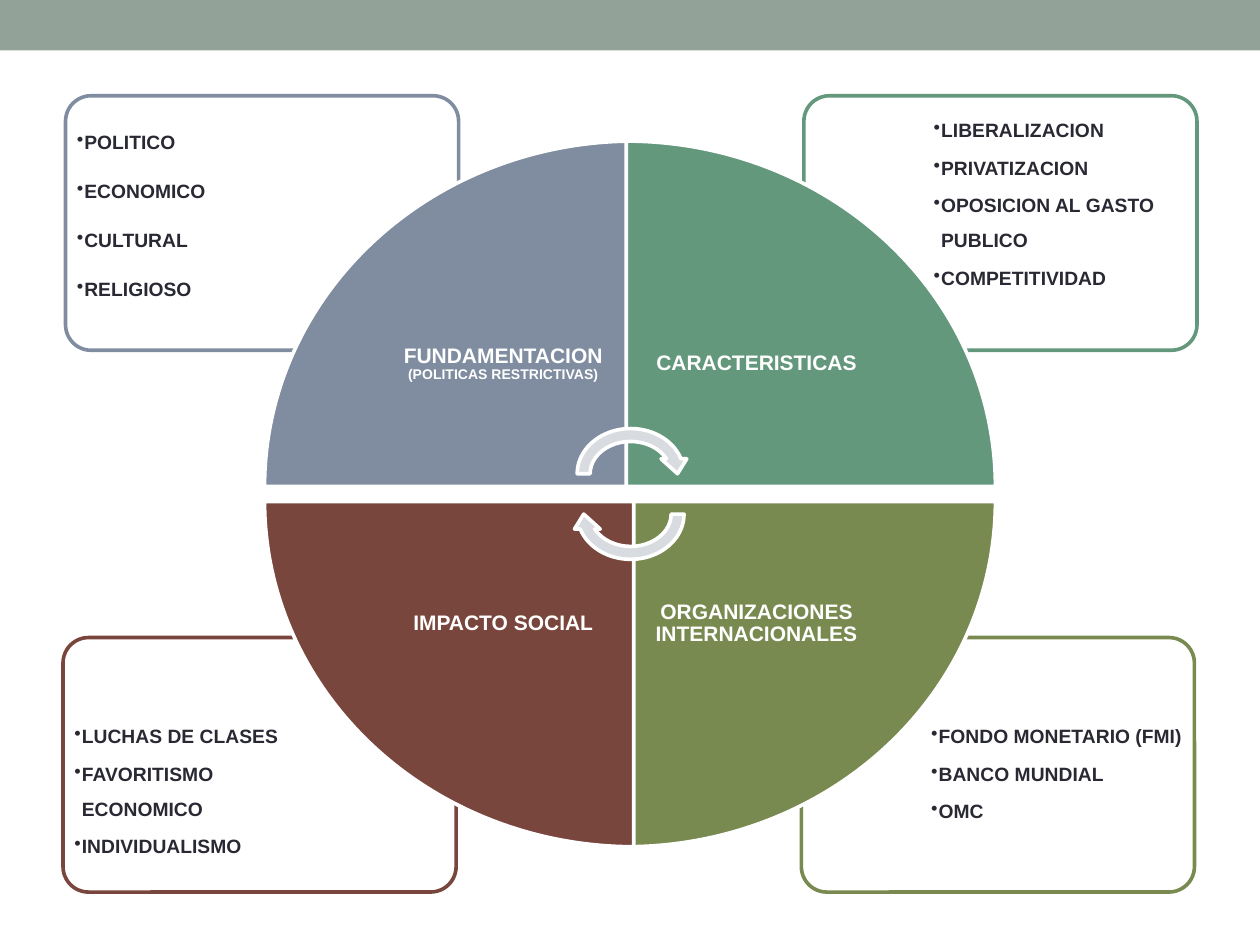
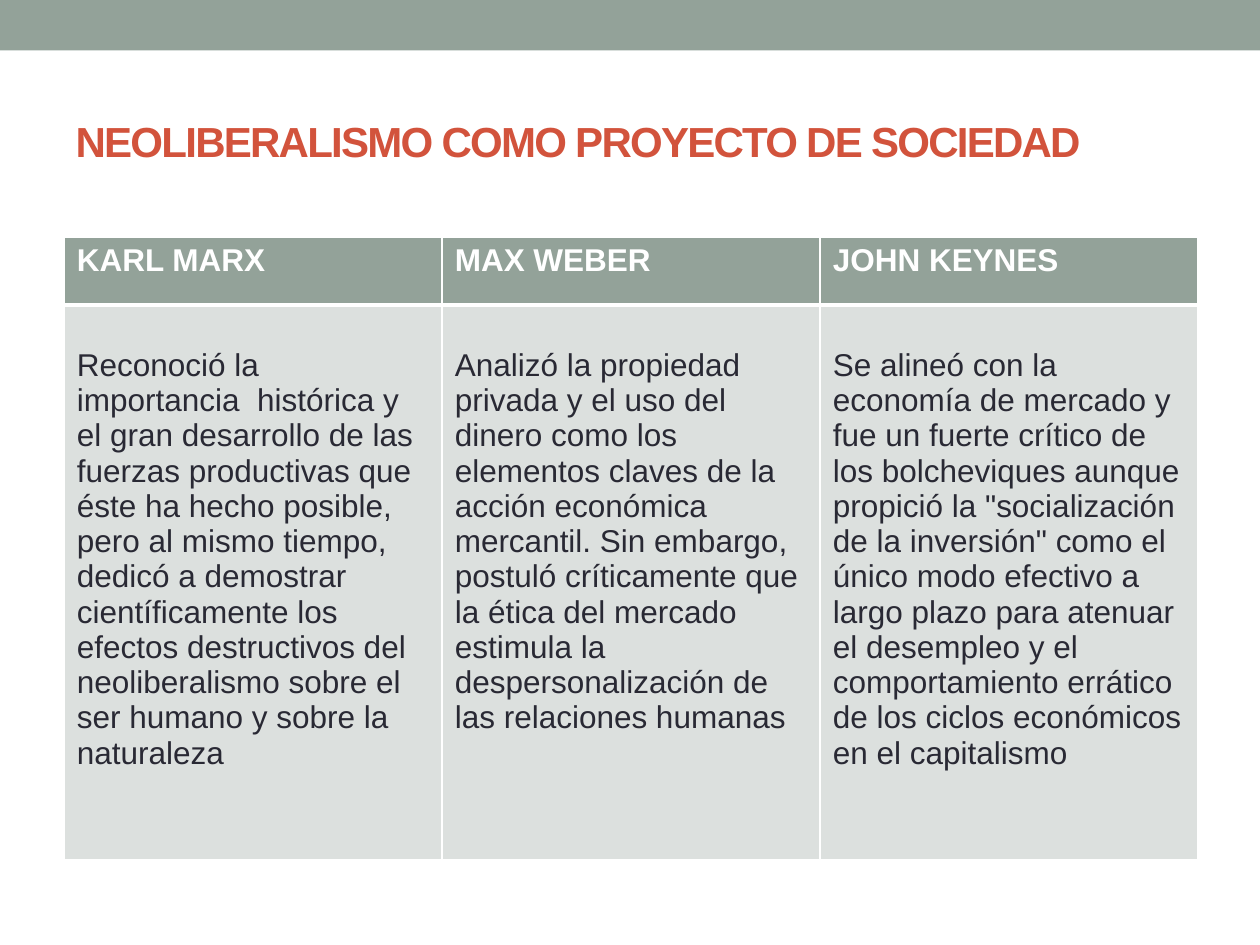
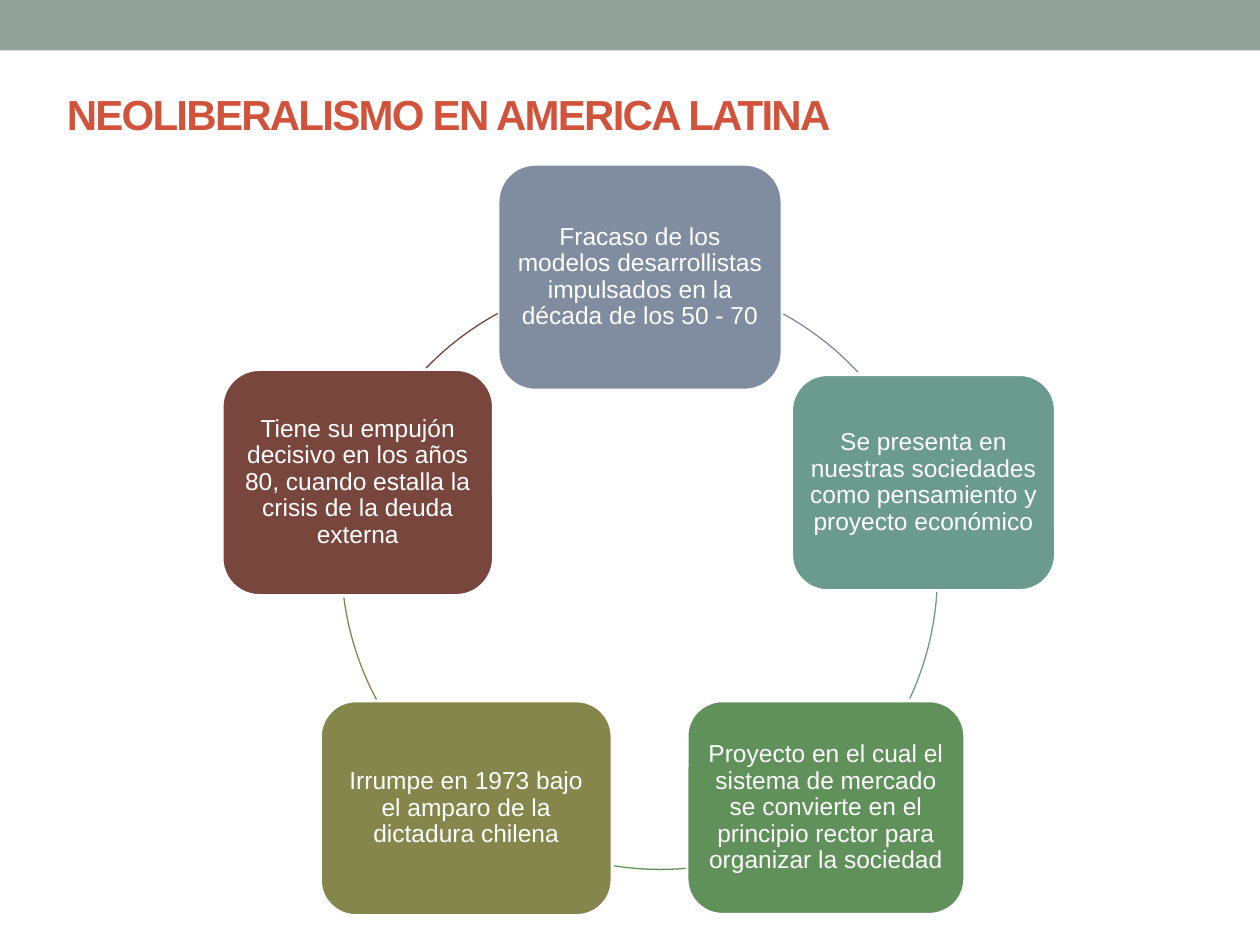
from lxml.etree import SubElement
from pptx import Presentation
from pptx.dml.color import RGBColor
from pptx.enum.shapes import MSO_SHAPE
from pptx.enum.text import MSO_ANCHOR, PP_ALIGN
from pptx.oxml.ns import qn
from pptx.util import Pt

PX = 9144
FONT = "Arial"
LINE = 2.08

WHITE = RGBColor(0xFF, 0xFF, 0xFF)
INK = RGBColor(0x29, 0x29, 0x34)
SAGE = RGBColor(0x93, 0xA2, 0x99)
PALE = RGBColor(0xDC, 0xE0, 0xDE)
RED = RGBColor(0xD2, 0x53, 0x3C)
SLATE = RGBColor(0x80, 0x8D, 0xA0)
GREEN = RGBColor(0x64, 0x98, 0x7C)
OLIVE = RGBColor(0x78, 0x8A, 0x50)
BROWN = RGBColor(0x79, 0x46, 0x3D)
TEAL = RGBColor(0x6B, 0x9A, 0x8E)
LEAF = RGBColor(0x61, 0x91, 0x5A)
MOSS = RGBColor(0x85, 0x86, 0x4B)
SILVER = RGBColor(0xD8, 0xDB, 0xDF)

# column, row, wedge rotation, colour, heading runs, line spacing, bullets
QUADRANTS = [
    (1, 1, 180, OLIVE, [("ORGANIZACIONES INTERNACIONALES", 12)], 1.5,
     ["FONDO MONETARIO (FMI)", "BANCO MUNDIAL", "OMC"]),
    (0, 1, 270, BROWN, [("IMPACTO SOCIAL", 12)], 1.5,
     ["LUCHAS DE CLASES", "FAVORITISMO ECONOMICO", "INDIVIDUALISMO"]),
    (1, 0, 90, GREEN, [("CARACTERISTICAS", 12)], 1.5,
     ["LIBERALIZACION", "PRIVATIZACION", "OPOSICION AL GASTO PUBLICO", "COMPETITIVIDAD"]),
    (0, 0, 0, SLATE, [("FUNDAMENTACION ", 12), ("(POLITICAS RESTRICTIVAS)", 8)], 2.0,
     ["POLITICO", "ECONOMICO", "CULTURAL", "RELIGIOSO"]),
]

THINKERS = [
    ("KARL MARX",
     "Reconoció la importancia  histórica y el gran desarrollo de las fuerzas productivas que "
     "éste ha hecho posible, pero al mismo tiempo, dedicó a demostrar científicamente los efectos "
     "destructivos del neoliberalismo sobre el ser humano y sobre la naturaleza"),
    ("MAX WEBER",
     "Analizó la propiedad privada y el uso del dinero como los elementos claves de la acción "
     "económica mercantil. Sin embargo, postuló críticamente que la ética del mercado estimula la "
     "despersonalización de las relaciones humanas"),
    ("JOHN KEYNES",
     "Se alineó con la economía de mercado y fue un fuerte crítico de los bolcheviques aunque "
     'propició la "socialización de la inversión" como el único modo efectivo a largo plazo para '
     "atenuar el desempleo y el comportamiento errático de los ciclos económicos en el capitalismo"),
]

# text, box, colour, circle corner, arc start and end in degrees
STAGES = [
    ("Fracaso de los modelos desarrollistas impulsados en la década de los 50 - 70",
     (395, 130, 226, 180), SLATE, (272, 220), (298.8, 317.6)),
    ("Se presenta en nuestras sociedades como pensamiento y proyecto económico",
     (628, 297, 210, 172), TEAL, (272, 219), (3.6, 25)),
    ("Proyecto en el cual el sistema de mercado se convierte en el principio rector para "
     "organizar la sociedad",
     (545, 556, 221, 170), LEAF, (288, 218), (85.1, 99.3)),
    ("Irrumpe en 1973 bajo el amparo de la dictadura chilena",
     (254, 556, 232, 171), MOSS, (271, 208), (151.9, 172.7)),
    ("Tiene su empujón decisivo en los años 80, cuando estalla la crisis de la deuda externa",
     (176, 293, 216, 180), BROWN, (272, 220), (224, 241.4)),
]
CIRCLE = 472


def px(*values):
    return [int(v * PX) for v in values]


def style(r, size, color, bold=False):
    r.font.name, r.font.size, r.font.bold = FONT, Pt(size), bold
    r.font.color.rgb = color


def add_shape(s, kind, box, fill=None, line=None, width=LINE):
    sp = s.shapes.add_shape(kind, *px(*box))
    sp.shadow.inherit = False
    if fill is None:
        sp.fill.background()
    else:
        sp.fill.solid()
        sp.fill.fore_color.rgb = fill
    if line is None:
        sp.line.fill.background()
    else:
        sp.line.color.rgb = line
        sp.line.width = Pt(width)
    return sp


def set_frame(tf, inset, anchor):
    tf.word_wrap = True
    tf.vertical_anchor = anchor
    tf.margin_left, tf.margin_top, tf.margin_right, tf.margin_bottom = px(*[inset] * 4)


def centre_text(tf, parts, inset, bold):
    set_frame(tf, inset, MSO_ANCHOR.MIDDLE)
    p = tf.paragraphs[0]
    p.alignment, p.line_spacing = PP_ALIGN.CENTER, 0.9
    for text, size in parts:
        r = p.add_run()
        r.text = text
        style(r, size, WHITE, bold)


def add_bullets(s, box, items, spacing):
    tf = s.shapes.add_textbox(*px(*box)).text_frame
    set_frame(tf, 5, MSO_ANCHOR.TOP)
    tf.text = "\n".join(items)
    for p in tf.paragraphs:
        p.line_spacing, p.space_after = spacing, Pt(1.65)
        style(p.runs[0], 11, INK, True)
        pPr = p._p.get_or_add_pPr()
        pPr.set("marL", str(6 * PX))
        pPr.set("indent", str(-6 * PX))
        SubElement(pPr, qn("a:buChar")).set("char", "•")


def add_titled_slide(prs, title, left, top):
    s = prs.slides.add_slide(prs.slide_layouts[5])
    sp = s.shapes.title
    sp.left, sp.top, sp.width, sp.height = px(left, top, 900, 108)
    tf = sp.text_frame
    tf.text = title
    tf.vertical_anchor = MSO_ANCHOR.MIDDLE
    p = tf.paragraphs[0]
    p.alignment = PP_ALIGN.LEFT
    style(p.runs[0], 24, RED, True)
    p.runs[0]._r.get_or_add_rPr().set("spc", "-100")
    return s


def set_borders(cell, bottom):
    tcPr = cell._tc.get_or_add_tcPr()
    for i, (side, width) in enumerate((("L", 1), ("R", 1), ("T", 1), ("B", bottom))):
        ln = tcPr.makeelement(qn(f"a:ln{side}"), {"w": str(Pt(width))})
        fill = SubElement(ln, qn("a:solidFill"))
        SubElement(fill, qn("a:srgbClr")).set("val", str(WHITE))
        tcPr.insert(i, ln)


def build_quadrants(prs):
    s = prs.slides.add_slide(prs.slide_layouts[6])
    band = add_shape(s, MSO_SHAPE.RECTANGLE, (0, 0, 1000, 40), SAGE)
    prs.slide_master.shapes._spTree.insert(2, band._element)

    for col, row, _, color, _, spacing, items in QUADRANTS:
        x, y = (52, 638)[col] - 2 * row, (76, 506)[row]
        card = add_shape(s, MSO_SHAPE.ROUNDED_RECTANGLE, (x, y, 312, 202), WHITE, color)
        card.adjustments[0] = 0.1
        add_bullets(s, (x + (4, 98)[col], y + (4, 55)[row], 210, 143), items, spacing)

    w, h = 293, 274
    for col, row, turn, color, heading, _, _ in sorted(QUADRANTS, key=lambda q: q[2]):
        x, y = (210, 497)[col], (112, 398)[row]
        d = (w - h) / 2
        box = (x + d, y - d, h, w) if turn % 180 else (x, y, w, h)
        wedge = add_shape(s, MSO_SHAPE.PIE_WEDGE, box, color, WHITE)
        wedge.rotation = turn
        label = s.shapes.add_textbox(*px((296, 497)[col], (192, 398)[row], 207, 194))
        centre_text(label.text_frame, heading, 9, True)

    for y, turn in ((335, 0), (367, 180)):
        arrow = add_shape(s, MSO_SHAPE.CIRCULAR_ARROW, (453, y, 95, 82), SILVER, WHITE)
        arrow.rotation = turn


def build_thinkers(prs):
    s = add_titled_slide(prs, "NEOLIBERALISMO COMO PROYECTO DE SOCIEDAD", 50, 58)
    table = s.shapes.add_table(2, len(THINKERS), *px(51, 188, 900, 494)).table
    table.rows[0].height, table.rows[1].height = px(54, 440)
    for col, texts in enumerate(THINKERS):
        for row, text in enumerate(texts):
            cell = table.cell(row, col)
            cell.text = text
            cell.fill.solid()
            cell.fill.fore_color.rgb = (SAGE, PALE)[row]
            cell.margin_top = px((5, 34)[row])[0]
            style(cell.text_frame.paragraphs[0].runs[0], 18, (WHITE, INK)[row], row == 0)
            set_borders(cell, (3, 1)[row])


def build_stages(prs):
    s = add_titled_slide(prs, "NEOLIBERALISMO EN AMERICA LATINA", 43, 36)
    for text, box, color, corner, angles in STAGES:
        sp = add_shape(s, MSO_SHAPE.ROUNDED_RECTANGLE, box, color, WHITE)
        centre_text(sp.text_frame, [(text, 14)], 6, False)
        arc = add_shape(s, MSO_SHAPE.ARC, (*corner, CIRCLE, CIRCLE), None, color, 0.75)
        for i, angle in enumerate(angles):
            arc.adjustments[i] = angle * 0.6


def main():
    prs = Presentation()
    prs.slide_width, prs.slide_height = px(1000, 750)
    build_quadrants(prs)
    build_thinkers(prs)
    build_stages(prs)
    prs.save("out.pptx")


if __name__ == "__main__":
    main()
